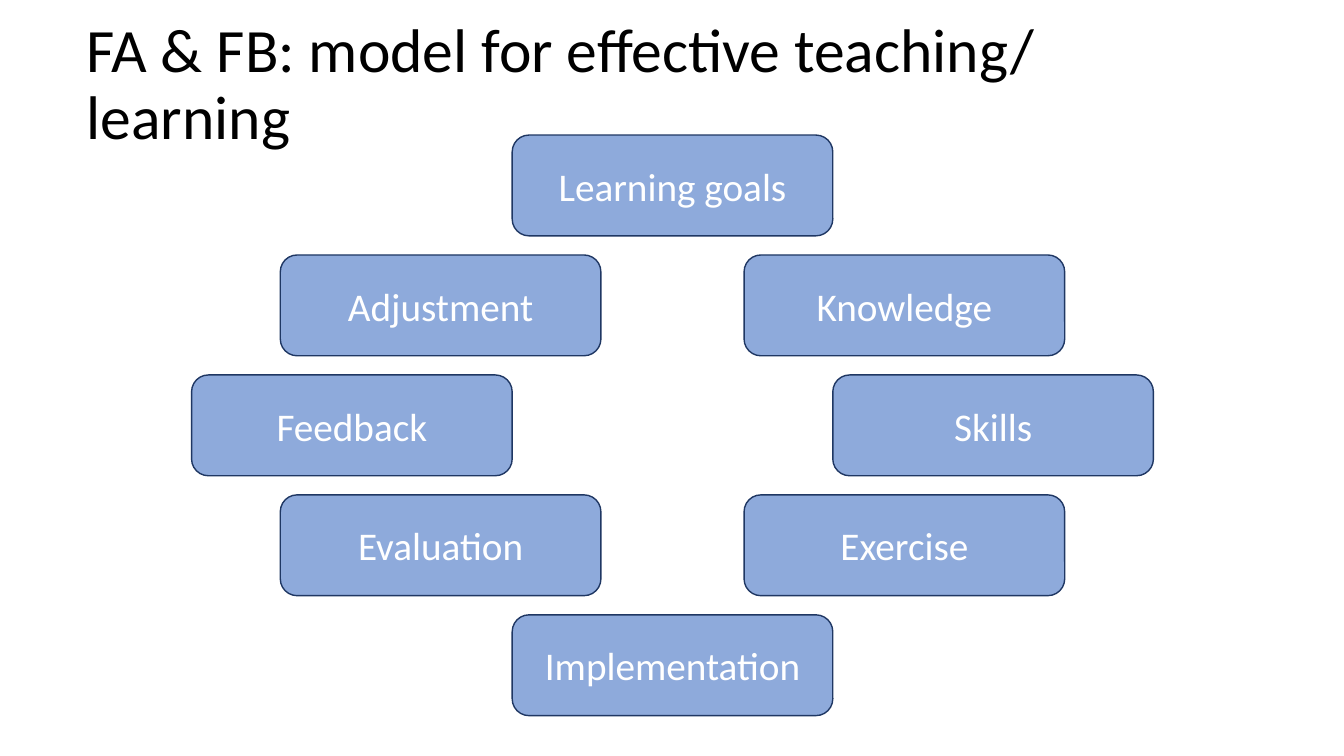
from pptx import Presentation
from pptx.dml.color import RGBColor
from pptx.enum.shapes import MSO_SHAPE as Shape
from pptx.enum.text import MSO_ANCHOR as Anchor, PP_ALIGN as Align
from pptx.util import Inches, Pt

TITLE = "FA & FB: model for effective teaching/ learning"
CYCLE_ROWS = [
    (0, ["Learning goals"]),
    (2.3, ["Adjustment", "Knowledge"]),
    (3.18, ["Feedback", "Skills"]),
    (2.3, ["Evaluation", "Exercise"]),
    (0, ["Implementation"]),
]
STEP_WIDTH, STEP_HEIGHT = 3.18, 1
CENTRE_LEFT, FIRST_TOP, ROW_PITCH = 5.08, 1.34, 1.19
TITLE_FORMAT = {"size": Pt(44), "name": "Calibri"}
STEP_FORMAT = {"size": Pt(28), "name": "Calibri"}


def colour(value):
    return RGBColor.from_string(value)


def write(shape, text, text_format, text_colour, align, spacing):
    frame = shape.text_frame
    frame.word_wrap = True
    frame.vertical_anchor = Anchor.MIDDLE
    para = frame.paragraphs[0]
    para.alignment = align
    para.line_spacing = spacing
    span = para.add_run()
    span.text = text
    for name, value in text_format.items():
        setattr(span.font, name, value)
    span.font.color.rgb = colour(text_colour)


def add_step(page, text, left, top):
    box = page.shapes.add_shape(
        Shape.ROUNDED_RECTANGLE,
        Inches(left), Inches(top), Inches(STEP_WIDTH), Inches(STEP_HEIGHT),
    )
    box.shadow.inherit = False
    box.fill.solid()
    box.fill.fore_color.rgb = colour("8EAADB")
    box.line.color.rgb = colour("1F3763")
    box.line.width = Pt(1)
    write(box, text, STEP_FORMAT, "FFFFFF", Align.CENTER, 1.0)


def main():
    deck = Presentation()
    deck.slide_width, deck.slide_height = Inches(13.33), Inches(7.5)
    page = deck.slides.add_slide(deck.slide_layouts[6])

    title = page.shapes.add_textbox(
        Inches(0.76), Inches(0.13), Inches(11.65), Inches(1.45)
    )
    write(title, TITLE, TITLE_FORMAT, "000000", Align.LEFT, 0.9)

    for row, (offset, steps) in enumerate(CYCLE_ROWS):
        for side, text in zip((-1, 1), steps):
            add_step(page, text, CENTRE_LEFT + side * offset, FIRST_TOP + row * ROW_PITCH)

    deck.save("out.pptx")


if __name__ == "__main__":
    main()
